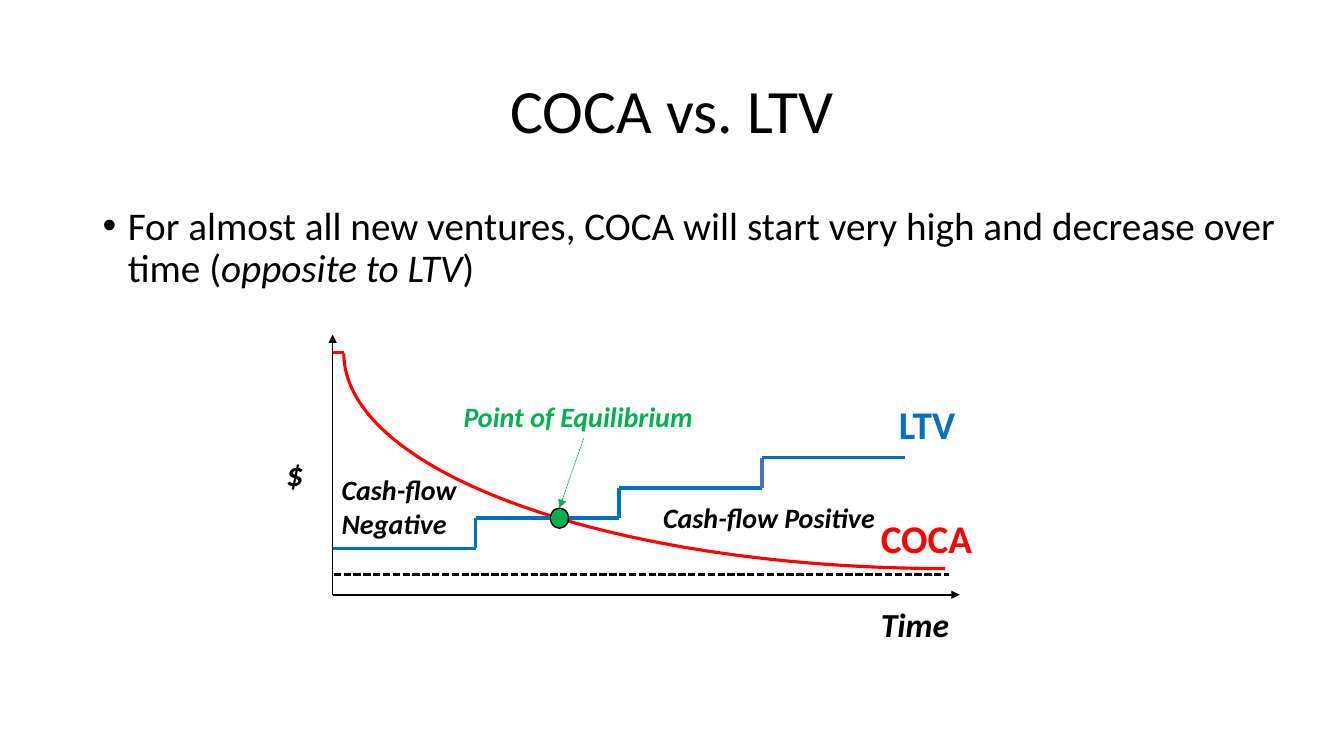
"""Build the COCA vs. LTV slide, with lengths as percentages of the slide's size."""
from dataclasses import dataclass

from lxml.etree import SubElement
from pptx import Presentation
from pptx.dml.color import RGBColor as RGB
from pptx.enum.dml import MSO_LINE as DASH
from pptx.enum.shapes import MSO_CONNECTOR as CONN, MSO_SHAPE as SHAPE
from pptx.enum.text import MSO_ANCHOR as ANCHOR, MSO_AUTO_SIZE as FIT, PP_ALIGN as ALIGN
from pptx.oxml.ns import qn
from pptx.util import Emu, Inches, Pt


@dataclass(frozen=True)
class Theme:
    font: str = "Calibri"
    black: str = "000000"
    red: str = "FF0000"
    blue: str = "0070C0"
    riser: str = "4472C4"
    green: str = "00B050"
    title: int = 44
    body: int = 28
    axis: int = 24
    note: int = 20


@dataclass(frozen=True)
class Box:
    left: float
    top: float
    width: float
    height: float


@dataclass(frozen=True)
class Label:
    lines: tuple[str, ...]
    box: Box
    size: int
    color: str
    italic: bool = True


@dataclass(frozen=True)
class Line:
    x1: float
    y1: float
    x2: float
    y2: float
    color: str
    width: float
    dashed: bool = False
    arrow: bool = False


T = Theme()
W, H = Inches(13.333), Inches(7.5)
X0, Y0 = 24.75, 78.67
CURVE_X, CURVE_Y = 25.58, 46.67
STEP_Y, RUN, RISE, STEPS = 72.53, 10.65, 4, 4

AXES = (
    Line(X0, Y0, 71.4, Y0, T.black, 1.25, arrow=True),
    Line(X0, Y0, X0, 44.27, T.black, 1.25, arrow=True),
)
COCA_START = Line(X0, CURVE_Y, CURVE_X, CURVE_Y, T.red, 2.25)
FLOOR = Line(24.83, 76, 70.58, 76, T.black, 1.75, dashed=True)
LABELS = (
    Label(("LTV",), Box(66.15, 52.27, 5.78, 7.6), T.body, T.blue, False),
    Label(("COCA",), Box(64.8, 67.33, 8.4, 7.6), T.body, T.red, False),
    Label(("Time",), Box(64.8, 79.2, 6.68, 6.67), T.axis, T.black),
    Label(("$",), Box(20.55, 59.2, 2.78, 6.67), T.axis, T.black),
    Label(("Cash-flow Positive",), Box(48.6, 65.6, 17.4, 5.87), T.note, T.black),
    Label(("Cash-flow", "Negative"), Box(24.68, 61.87, 10.58, 10.27), T.note, T.black),
)
EQUILIBRIUM = Label(("Point of Equilibrium",), Box(33.75, 52.13, 19.35, 5.87), T.note, T.green)


def px(x: float) -> Emu:
    return Emu(round(W * x / 100))


def py(y: float) -> Emu:
    return Emu(round(H * y / 100))


def place(box: Box) -> tuple[Emu, Emu, Emu, Emu]:
    return px(box.left), py(box.top), px(box.width), py(box.height)


def add_run(p, text: str, size: int, color: str = T.black, bold: bool = False, italic: bool = False) -> None:
    r = p.add_run()
    r.text = text
    f = r.font
    f.name, f.size, f.bold, f.italic = T.font, Pt(size), bold, italic
    f.color.rgb = RGB.from_string(color)


def add_label(s, label: Label):
    sp = s.shapes.add_textbox(*place(label.box))
    tf = sp.text_frame
    tf.word_wrap, tf.auto_size = False, FIT.SHAPE_TO_FIT_TEXT
    for i, text in enumerate(label.lines):
        p = tf.add_paragraph() if i else tf.paragraphs[0]
        add_run(p, text, label.size, label.color, True, label.italic)
    return sp


def add_line(s, line: Line):
    cx = s.shapes.add_connector(CONN.STRAIGHT, px(line.x1), py(line.y1), px(line.x2), py(line.y2))
    cx.line.color.rgb = RGB.from_string(line.color)
    cx.line.width = Pt(line.width)
    if line.dashed:
        cx.line.dash_style = DASH.SQUARE_DOT
    if line.arrow:
        SubElement(cx.line._get_or_add_ln(), qn("a:tailEnd"), type="triangle")
    SubElement(cx._element.spPr, qn("a:effectLst"))
    return cx


def add_outline(s, kind: SHAPE, box: Box, color: str, width: float, fill: str | None = None):
    sp = s.shapes.add_shape(kind, *place(box))
    sp.shadow.inherit = False
    if fill:
        sp.fill.solid()
        sp.fill.fore_color.rgb = RGB.from_string(fill)
    else:
        sp.fill.background()
    sp.line.color.rgb = RGB.from_string(color)
    sp.line.width = Pt(width)
    return sp


def add_heading(s) -> None:
    tf = s.shapes.add_textbox(*place(Box(6.9, 5.33, 86.25, 19.33))).text_frame
    tf.word_wrap, tf.vertical_anchor = True, ANCHOR.MIDDLE
    p = tf.paragraphs[0]
    p.alignment, p.line_spacing = ALIGN.CENTER, 0.9
    add_run(p, "COCA vs. LTV", T.title)


def add_body(s) -> None:
    tf = s.shapes.add_textbox(*place(Box(6.9, 26.67, 90.38, 66.8))).text_frame
    tf.word_wrap = True
    p = tf.paragraphs[0]
    p.line_spacing, p.space_before = 0.9, Pt(10)
    pPr = p._p.get_or_add_pPr()
    pPr.set("marL", str(Inches(0.25)))
    pPr.set("indent", str(-Inches(0.25)))
    SubElement(pPr, qn("a:buFont"), typeface="Arial")
    SubElement(pPr, qn("a:buChar"), char="•")
    add_run(p, "For almost all new ventures, COCA will start very high and decrease over time (", T.body)
    add_run(p, "opposite to LTV", T.body, italic=True)
    add_run(p, ")", T.body)


def add_staircase(s) -> None:
    for i in range(STEPS):
        x, y = X0 + i * RUN, STEP_Y - i * RISE
        if i:
            color = T.riser if i == STEPS - 1 else T.blue
            add_line(s, Line(x, y + RISE, x, y, color, 2.5))
        add_line(s, Line(x, y, x + RUN, y, T.blue, 2.5))


def add_equilibrium(s) -> None:
    dot = add_outline(s, SHAPE.OVAL, Box(40.95, 67.2, 1.35, 2.67), T.black, 1, T.green)
    label = add_label(s, EQUILIBRIUM)
    cx = add_line(s, Line(43.43, 58, 41.63, 67.2, T.green, 0.5, dashed=True, arrow=True))
    cx.begin_connect(label, 2)
    cx.end_connect(dot, 0)


def main() -> None:
    prs = Presentation()
    prs.slide_width, prs.slide_height = W, H
    s = prs.slides.add_slide(prs.slide_layouts[6])
    add_heading(s)
    add_body(s)
    for line in AXES:
        add_line(s, line)
    add_outline(s, SHAPE.ARC, Box(CURVE_X, 18.27, 89.48, 56.93), T.red, 2.25).rotation = 180
    add_line(s, COCA_START)
    add_line(s, FLOOR)
    add_staircase(s)
    for label in LABELS:
        add_label(s, label)
    add_equilibrium(s)
    prs.save("out.pptx")


if __name__ == "__main__":
    main()
